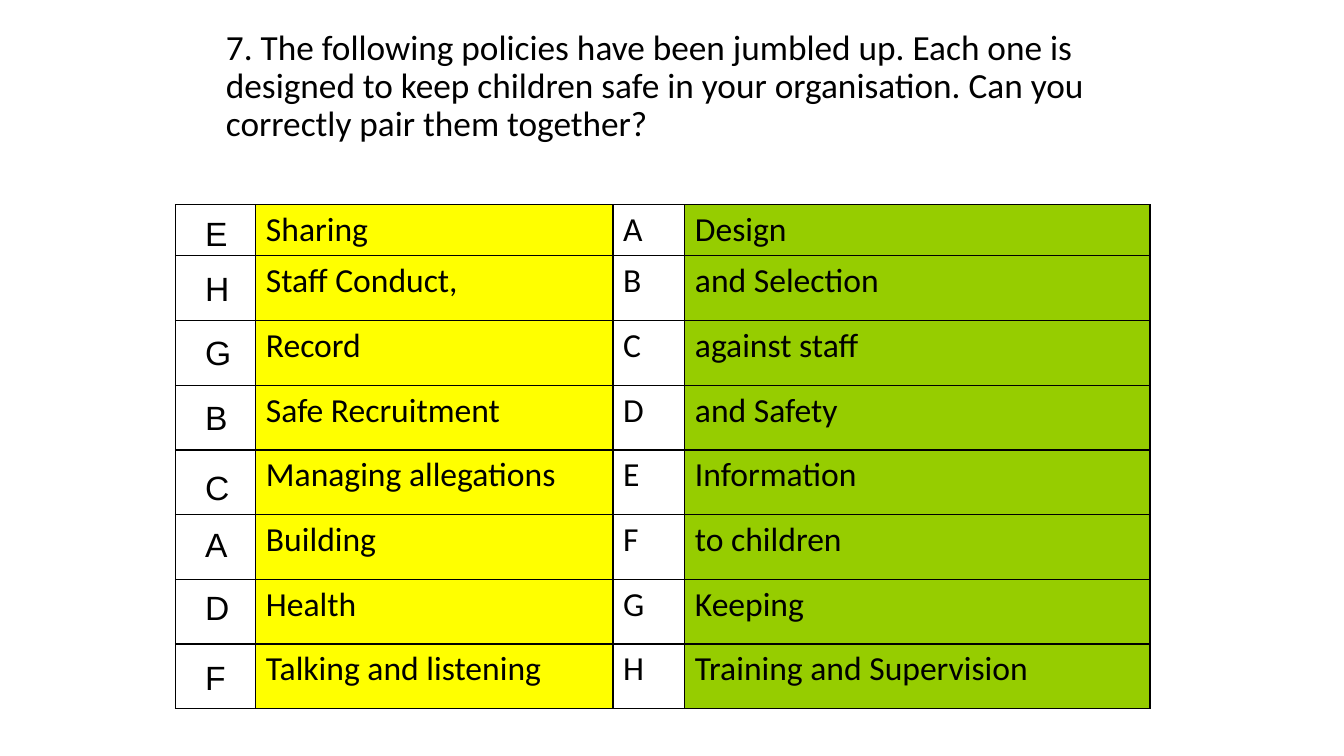
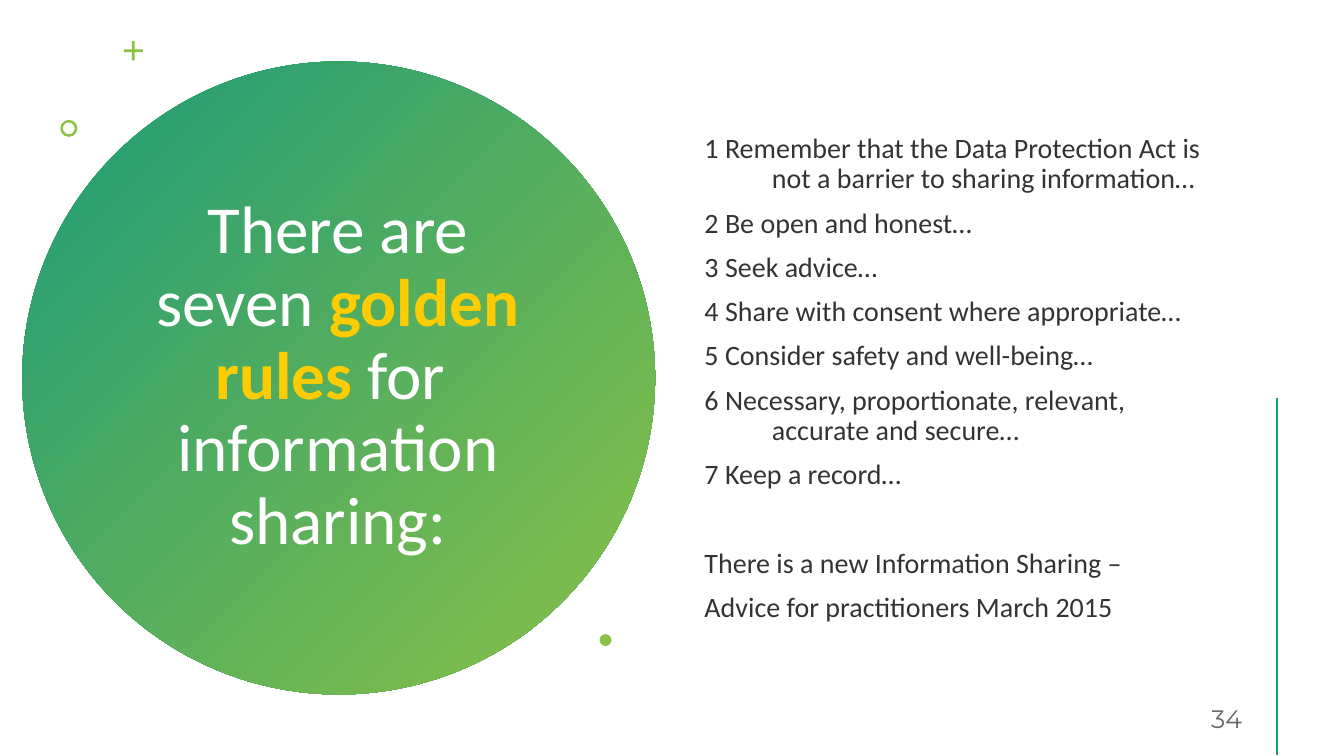
from lxml import etree
from pptx import Presentation
from pptx import util as u
from pptx.dml.color import RGBColor
from pptx.enum import shapes, text
from pptx.oxml import ns

Cm, Pt = u.Cm, u.Pt

# Shared look
COLOURS = {
    "black": "000000", "white": "FFFFFF", "body": "333333", "number": "666666",
    "yellow": "FFFF00", "lime": "96CD00", "gold": "FFCC00",
    "teal": "1D9A78", "leaf": "8BC145",
}
FONT, ANSWER_FONT, NUMBER_FONT = "Calibri", "Arial", "Montserrat"

# Content: policies slide
QUESTION = ("7. The following policies have been jumbled up. Each one is designed to keep "
            "children safe in your organisation. Can you correctly pair them together?")
POLICIES = [  # answer, its top in cm, first half, letter, second half
    ("E", 5.23, "Sharing", "A", "Design"),
    ("H", 6.63, "Staff Conduct,", "B", "and Selection"),
    ("G", 8.23, "Record", "C", "against staff"),
    ("B", 9.86, "Safe Recruitment", "D", "and Safety"),
    ("C", 11.63, "Managing allegations", "E", "Information"),
    ("A", 13.06, "Building", "F", "to children"),
    ("D", 14.66, "Health", "G", "Keeping"),
    ("F", 16.43, "Talking and listening", "H", "Training and Supervision"),
]
COLUMN_WIDTHS = [2.03, 9, 1.81, 11.72]
COLUMN_FILLS = ["white", "yellow", "white", "lime"]
FIRST_ROW, OTHER_ROWS = 1.27, 1.63

# Content: golden rules slide
HEADING = [("There are seven ", "white", False), ("golden rules ", "gold", True),
           ("for ", "white", False), ("\n", "white", False),
           ("information sharing:", "white", False)]
RULES = [
    "Remember that the Data Protection Act is not a barrier to sharing information…",
    "Be open and honest…",
    "Seek advice…",
    "Share with consent where appropriate…",
    "Consider safety and well-being…",
    "Necessary, proportionate, relevant, accurate and secure…",
    "Keep a record…",
]
ADVICE = ["There is a new Information Sharing –", "Advice for practitioners March 2015"]
ORNAMENTS = [  # preset, left, top, size, adjustment
    (shapes.MSO_SHAPE.CROSS, 3.12, 1.04, 0.48, 0.43),
    (shapes.MSO_SHAPE.DONUT, 1.52, 3.02, 0.43, 0.15),
    (shapes.MSO_SHAPE.OVAL, 15.11, 15.98, 0.3, None),
]


def colour(name):
    return RGBColor.from_string(COLOURS[name])


def apply(target, values):
    for name, value in values.items():
        setattr(target, name, value)


def write(para, words, size, tint="black", font=FONT, bold=False):
    span = para.add_run()
    span.text = words
    apply(span.font, {"size": Pt(size), "name": font, "bold": bold})
    span.font.color.rgb = colour(tint)


def place(box, left, top, width, height):
    """Move a text holder and give it the shared frame settings."""
    apply(box, {"left": Cm(left), "top": Cm(top), "width": Cm(width), "height": Cm(height)})
    apply(box.text_frame, {"word_wrap": True, "auto_size": text.MSO_AUTO_SIZE.NONE,
                           "vertical_anchor": text.MSO_ANCHOR.MIDDLE})
    return box.text_frame


def title_para(page, area, align):
    para = place(page.shapes.title, *area).paragraphs[0]
    apply(para, {"alignment": align, "line_spacing": 0.9})
    return para


def text_box(page, *area):
    return place(page.shapes.add_textbox(0, 0, 0, 0), *area)


def add_plain(page, preset, left, top, size):
    shape = page.shapes.add_shape(preset, Cm(left), Cm(top), Cm(size), Cm(size))
    shape.shadow.inherit = False
    shape.line.fill.background()
    return shape


def border_cell(cell):
    props = cell._tc.get_or_add_tcPr()
    for index, side in enumerate(("lnL", "lnR", "lnT", "lnB")):
        line = etree.Element(ns.qn("a:" + side), w=str(Pt(1)))
        solid = etree.SubElement(line, ns.qn("a:solidFill"))
        etree.SubElement(solid, ns.qn("a:srgbClr"), val=COLOURS["black"])
        props.insert(index, line)


def build_policies(deck):
    page = deck.slides.add_slide(deck.slide_layouts[5])
    write(title_para(page, (5.44, 0.61, 22.86, 3.18), text.PP_ALIGN.LEFT), QUESTION, 25.2)

    # Table of policy halves
    heights = [FIRST_ROW] + [OTHER_ROWS] * (len(POLICIES) - 1)
    table = page.shapes.add_table(len(POLICIES), len(COLUMN_WIDTHS), Cm(4.42), Cm(5.16),
                                  Cm(sum(COLUMN_WIDTHS)), Cm(sum(heights))).table
    apply(table, {"first_row": False, "horz_banding": False})
    for column, width in zip(table.columns, COLUMN_WIDTHS):
        column.width = Cm(width)
    for row, height, policy in zip(table.rows, heights, POLICIES):
        row.height = Cm(height)
        for cell, words, fill in zip(row.cells, ("",) + policy[2:], COLUMN_FILLS):
            cell.fill.solid()
            cell.fill.fore_color.rgb = colour(fill)
            border_cell(cell)
            if words:
                write(cell.text_frame.paragraphs[0], words, 24)

    # Answers laid over the empty first column
    for answer, top, *_ in POLICIES:
        frame = text_box(page, 4.92, top, 1.2, 1.28)
        write(frame.paragraphs[0], answer, 24, font=ANSWER_FONT)


def build_rules(deck):
    page = deck.slides.add_slide(deck.slide_layouts[1])

    # Heading on a gradient circle
    circle = add_plain(page, shapes.MSO_SHAPE.OVAL, 0.56, 1.55, 15.95)
    circle.fill.gradient()
    circle.fill.gradient_angle = 315
    for stop, tint in zip(circle.fill.gradient_stops, ("teal", "leaf")):
        stop.color.rgb = colour(tint)
    page.shapes.title.element.addprevious(circle.element)
    para = title_para(page, (3.45, 3.58, 10.13, 11.86), text.PP_ALIGN.CENTER)
    for words, tint, bold in HEADING:
        if words == "\n":
            para.add_line_break()
        else:
            write(para, words, 48, tint, bold=bold)

    # Small ornaments
    for preset, left, top, size, adjustment in ORNAMENTS:
        ornament = add_plain(page, preset, left, top, size)
        ornament.fill.solid()
        ornament.fill.fore_color.rgb = colour("leaf")
        if adjustment:
            ornament.adjustments[0] = adjustment

    # Rules, then the advice after a wider gap
    frame = place(page.placeholders[1], 17.5, 1.45, 13.26, 16.21)
    lines = [f"{number} {rule}" for number, rule in enumerate(RULES, 1)] + ADVICE
    for index, words in enumerate(lines):
        para = frame.add_paragraph() if index else frame.paragraphs[0]
        gap = 42 if index == len(RULES) else 10
        apply(para, {"line_spacing": 0.9, "space_before": Pt(gap)})
        props = para._p.get_or_add_pPr()
        props.set("marL", str(Cm(1.7)))
        props.set("indent", str(-Cm(1.7)))
        etree.SubElement(props, ns.qn("a:buNone"))
        write(para, words, 20, "body")

    # Page number and side line
    para = text_box(page, 23.93, 17.65, 7.62, 1.02).paragraphs[0]
    apply(para, {"alignment": text.PP_ALIGN.RIGHT, "line_spacing": 0.9})
    write(para, "34", 18, "number", NUMBER_FONT)
    line = page.shapes.add_connector(shapes.MSO_CONNECTOR.STRAIGHT,
                                     Cm(32.18), Cm(10.03), Cm(32.18), Cm(19.02))
    line.line.width = Pt(2)
    line.line.color.rgb = colour("teal")
    etree.SubElement(line.element.spPr, ns.qn("a:effectLst"))


def main():
    deck = Presentation()
    apply(deck, {"slide_width": Cm(33.87), "slide_height": Cm(19.05)})
    build_policies(deck)
    build_rules(deck)
    deck.save("out.pptx")


if __name__ == "__main__":
    main()
